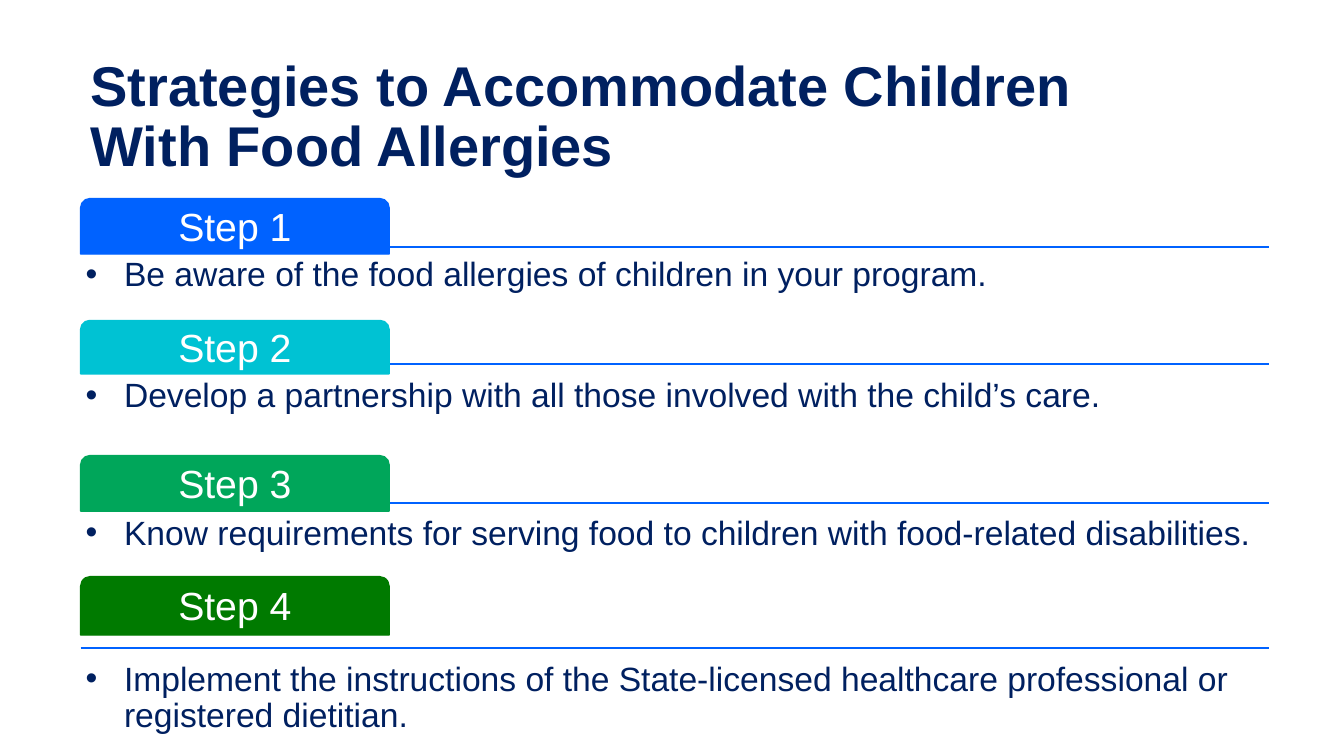
from lxml.etree import SubElement
from pptx import Presentation
from pptx.dml.color import RGBColor
from pptx.enum.shapes import MSO_CONNECTOR, MSO_SHAPE
from pptx.enum.text import MSO_ANCHOR, PP_ALIGN
from pptx.oxml.ns import qn
from pptx.util import Inches, Pt


def rgb(value):
    return RGBColor.from_string(value)


class StepSlide:
    """Draws the title, rules, tabs and bullets of a step list on one slide."""

    FONT = "Arial"
    NAVY = "002060"
    BLUE = "0062FF"
    WHITE = "FFFFFF"
    LEFT = 0.8
    WIDTH = 11.79
    TAB_WIDTH = 3.06

    def __init__(self, prs):
        self.s = prs.slides.add_slide(prs.slide_layouts[6])

    def frame(self, sp, anchor, insets):
        tf = sp.text_frame
        tf.word_wrap = True
        tf.vertical_anchor = anchor
        tf.margin_left, tf.margin_top, tf.margin_right, tf.margin_bottom = map(Inches, insets)
        p = tf.paragraphs[0]
        p.line_spacing = 0.9
        return p

    def run(self, p, text, size, color, bold=False):
        r = p.add_run()
        r.text = text
        r.font.name = self.FONT
        r.font.size = Pt(size)
        r.font.bold = bold
        r.font.color.rgb = rgb(color)

    def title(self, text):
        sp = self.s.shapes.add_textbox(Inches(self.LEFT), Inches(0.45), Inches(10.9), Inches(1.45))
        p = self.frame(sp, MSO_ANCHOR.MIDDLE, (0.1, 0.05, 0.1, 0.05))
        self.run(p, text, 40, self.NAVY, bold=True)

    def rule(self, y):
        sp = self.s.shapes.add_connector(
            MSO_CONNECTOR.STRAIGHT, Inches(self.LEFT), Inches(y),
            Inches(self.LEFT + self.WIDTH), Inches(y))
        sp.line.color.rgb = rgb(self.BLUE)
        sp.line.width = Pt(1)
        SubElement(sp._element.spPr, qn("a:effectLst"))

    def tab(self, text, top, height, color):
        sp = self.s.shapes.add_shape(
            MSO_SHAPE.ROUND_2_SAME_RECTANGLE, Inches(self.LEFT), Inches(top),
            Inches(self.TAB_WIDTH), Inches(height))
        sp.shadow.inherit = False
        sp.fill.solid()
        sp.fill.fore_color.rgb = rgb(color)
        sp.line.color.rgb = rgb(color)
        sp.line.width = Pt(1)
        p = self.frame(sp, MSO_ANCHOR.MIDDLE, (0.08, 0.08, 0.08, 0.06))
        p.alignment = PP_ALIGN.CENTER
        self.run(p, text, 28, self.WHITE)

    def bullet(self, text, top, height):
        sp = self.s.shapes.add_textbox(
            Inches(self.LEFT), Inches(top), Inches(self.WIDTH), Inches(height))
        p = self.frame(sp, MSO_ANCHOR.TOP, (0.05,) * 4)
        pPr = p._p.get_or_add_pPr()
        pPr.set("marL", str(Inches(0.38)))
        pPr.set("indent", str(-Inches(0.38)))
        color = SubElement(pPr, qn("a:buClr"))
        SubElement(color, qn("a:srgbClr"), val=self.NAVY)
        SubElement(pPr, qn("a:buFont"), typeface=self.FONT)
        SubElement(pPr, qn("a:buChar"), char="•")
        self.run(p, text, 24, self.NAVY)


STEPS = [
    (1.97, 0.55, 2.45, 2.51, 0.83, "0062FF",
     "Be aware of the food allergies of children in your program."),
    (3.18, 0.53, 3.61, 3.71, 0.71, "00C2D3",
     "Develop a partnership with all those involved with the child’s care."),
    (4.52, 0.55, 4.99, 5.07, 1, "00A65A",
     "Know requirements for serving food to children with food-related disabilities."),
    (5.72, 0.58, 6.43, 6.52, 0.83, "007A00",
     "Implement the instructions of the State-licensed healthcare professional "
     "or registered dietitian."),
]


def main():
    prs = Presentation()
    prs.slide_width, prs.slide_height = Inches(13.33), Inches(7.5)
    slide = StepSlide(prs)
    slide.title("Strategies to Accommodate Children With Food Allergies\u00a0".strip())
    for number, step in enumerate(STEPS, 1):
        tab_top, tab_height, rule_y, text_top, text_height, color, text = step
        slide.rule(rule_y)
        slide.tab(f"Step {number}", tab_top, tab_height, color)
        slide.bullet(text, text_top, text_height)
    prs.save("out.pptx")


if __name__ == "__main__":
    main()
